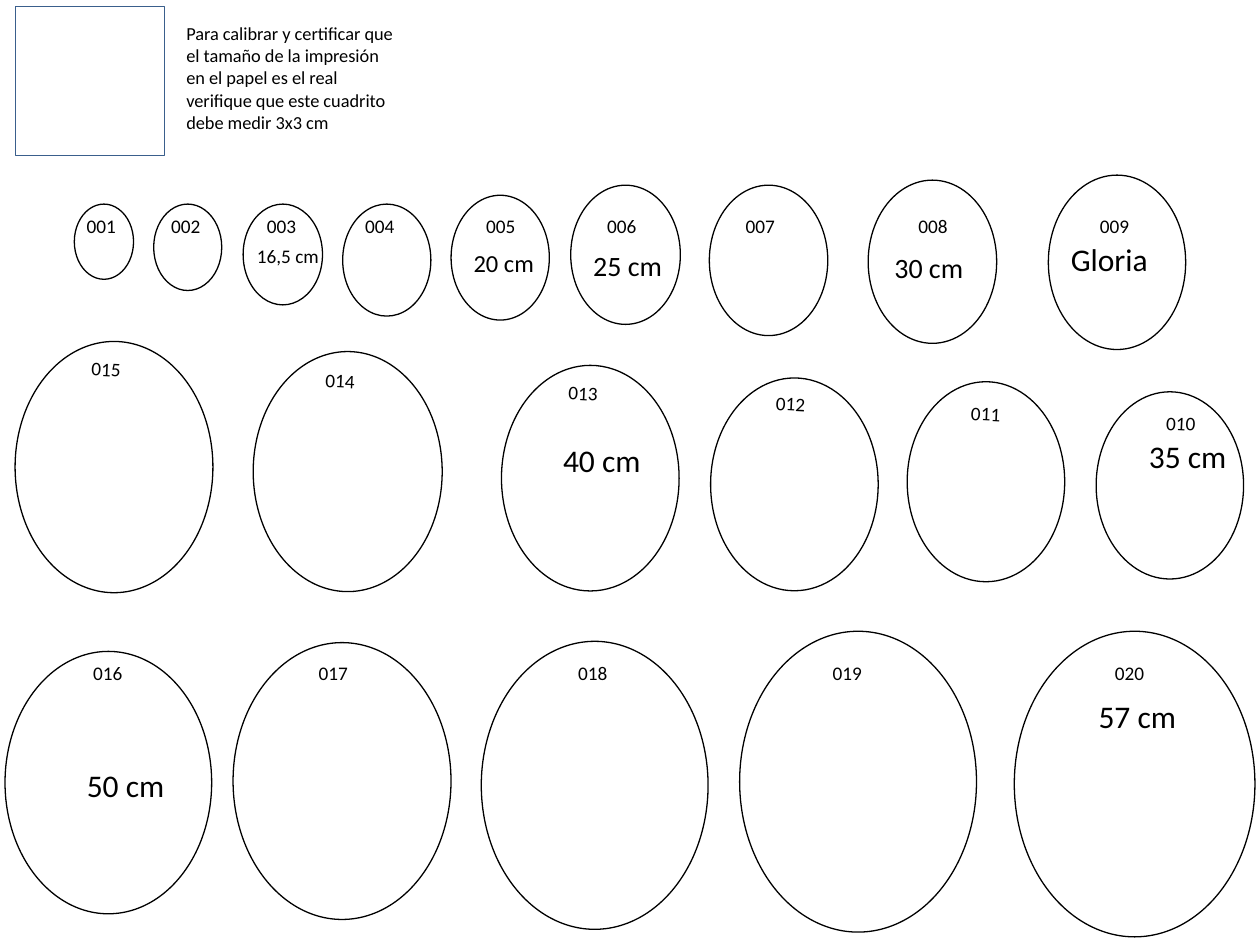
from lxml import etree
from pptx import Presentation
from pptx.dml.color import RGBColor
from pptx.enum import shapes, text
from pptx.oxml.ns import qn
from pptx.util import Inches, Pt

BLACK = RGBColor(0, 0, 0)
WHITE = RGBColor(255, 255, 255)
BLUE = RGBColor(0x3A, 0x5F, 0x8C)
FONT = "Calibri"
OVAL_RATIO = 1.27

SMALL_ROW = dict(
    box=(0.59, 1.39),
    ovals=[(0, 0.23, 0.47), (0.63, 0.23, 0.54), (1.34, 0.23, 0.63),
           (2.13, 0.23, 0.7), (2.99, 0.16, 0.78), (3.94, 0.08, 0.87),
           (5.04, 0.08, 0.94), (6.3, 0.04, 1.02), (7.73, 0, 1.09)],
    captions=[("16,5 cm", 1.35, 0.5, 0.7, 0.29, 11),
              ("20 cm", 3.07, 0.53, 0.68, 0.34, 14),
              ("25 cm", 4.02, 0.53, 0.75, 0.37, 16),
              ("30 cm", 6.41, 0.55, 0.75, 0.37, 16),
              ("Gloria", 7.81, 0.47, 0.82, 0.4, 18)],
    numbers=range(1, 10),
    number_box=(0, 0.26, 8.53, 0.29),
    stops=[0.67, 1.43, 2.21, 3.17, 4.13, 5.23, 6.6, 8.04],
    filled=2,
)
MIDDLE_ROW = dict(
    box=(0.12, 2.71),
    ovals=[(0, 0, 1.57), (1.89, 0.08, 1.5), (3.86, 0.19, 1.41),
           (5.52, 0.29, 1.33), (7.08, 0.32, 1.25), (8.58, 0.4, 1.17)],
    captions=[("35 cm", 8.9, 0.71, 0.82, 0.4, 18),
              ("40 cm", 4.25, 0.74, 0.82, 0.4, 18)],
    numbers=range(15, 9, -1),
    number_box=(0.46, 0.29, 9.02, 0.29),
    stops=[1.86, 3.79, 5.44, 6.99, 8.54],
    inset=0.14,
    rotation=2.9,
)
LARGE_ROW = dict(
    box=(0.04, 5.01),
    ovals=[(0, 0.16, 1.64), (1.81, 0.09, 1.73), (3.78, 0.08, 1.8),
           (5.83, 0, 1.88), (8.01, 0, 1.91)],
    captions=[("50 cm", 0.55, 1.02, 0.82, 0.4, 18),
              ("57 cm", 8.58, 0.47, 0.82, 0.4, 18)],
    numbers=range(16, 21),
    number_box=(0.6, 0.19, 8.68, 0.29),
    stops=[1.79, 3.85, 5.87, 8.11],
)


def add_text(page, content, left, top, width, height, size=11, wrap=False,
             inset=0.1, rotation=0, stops=()):
    box = page.shapes.add_textbox(
        Inches(left), Inches(top), Inches(width), Inches(height))
    box.rotation = rotation
    frame = box.text_frame
    frame.word_wrap = wrap
    frame.auto_size = text.MSO_AUTO_SIZE.SHAPE_TO_FIT_TEXT
    frame.margin_left = Inches(inset)
    frame.text = content
    for para in frame.paragraphs:
        para.font.size = Pt(size)
        if stops:
            tabs = etree.SubElement(para._p.get_or_add_pPr(), qn("a:tabLst"))
            para._p.pPr.insert(0, tabs)
            for stop in stops:
                etree.SubElement(tabs, qn("a:tab"),
                                 pos=str(Inches(stop)), algn="l")
        for span in para.runs:
            span.font.name = FONT
            span.font.size = Pt(size)
            span.font.color.rgb = BLACK


def add_outline(page, kind, left, top, width, height, color=BLACK,
                weight=0.75, filled=False):
    shape = page.shapes.add_shape(
        kind, Inches(left), Inches(top), Inches(width), Inches(height))
    shape.shadow.inherit = False
    if filled:
        shape.fill.solid()
        shape.fill.fore_color.rgb = WHITE
    else:
        shape.fill.background()
    shape.line.color.rgb = color
    shape.line.width = Pt(weight)


def add_oval_row(page, box, ovals, captions, numbers, number_box, stops,
                 inset=0.1, rotation=0, filled=0):
    left, top = box
    for content, x, y, width, height, size in captions:
        add_text(page, content, left + x, top + y, width, height, size=size)
    for index, (x, y, width) in enumerate(ovals):
        add_outline(page, shapes.MSO_SHAPE.OVAL, left + x, top + y,
                    width, width * OVAL_RATIO, filled=index < filled)
    x, y, width, height = number_box
    labels = "\t".join(f"{number:03d}" for number in numbers)
    add_text(page, labels, left + x, top + y, width, height, wrap=True,
             inset=inset, rotation=rotation, stops=stops)


def add_calibration(page, left, top):
    add_text(page, "Para calibrar y certificar que el tamaño de la impresión "
             "en el papel es el real verifique que este cuadrito\n"
             "debe medir 3x3 cm",
             left + 1.26, top + 0.08, 1.89, 0.98, size=10.5, wrap=True)
    add_outline(page, shapes.MSO_SHAPE.RECTANGLE, left, top, 1.18, 1.18,
                color=BLUE, weight=0.25, filled=True)


def main():
    deck = Presentation()
    deck.slide_width = Inches(10)
    deck.slide_height = Inches(7.5)
    page = deck.slides.add_slide(deck.slide_layouts[6])
    for row in (SMALL_ROW, MIDDLE_ROW, LARGE_ROW):
        add_oval_row(page, **row)
    add_calibration(page, 0.12, 0.05)
    deck.save("out.pptx")


if __name__ == "__main__":
    main()
